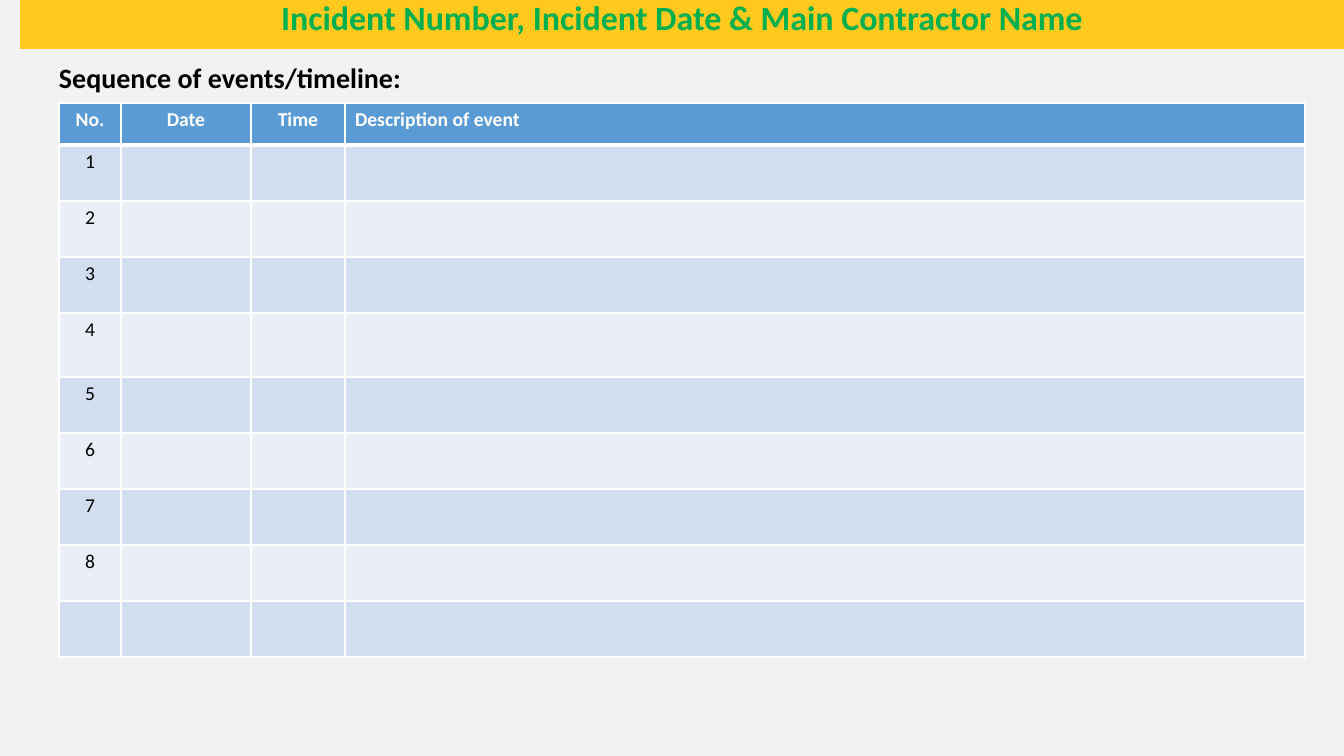
from lxml import etree
from pptx import Presentation
from pptx import util as u
from pptx.dml.color import RGBColor
from pptx.enum import text
from pptx.oxml import ns

PX_PER_INCH = 100.8
FONT = "Calibri"
BACKGROUND = RGBColor(0xF2, 0xF2, 0xF2)
BAND = RGBColor(0xFF, 0xC9, 0x1D)
GREEN = RGBColor(0x00, 0xB0, 0x50)
BLACK = RGBColor(0x00, 0x00, 0x00)
WHITE = RGBColor(0xFF, 0xFF, 0xFF)
HEADER_BLUE = RGBColor(0x5B, 0x9B, 0xD5)
ROW_FILLS = (RGBColor(0xD2, 0xDE, 0xEF), RGBColor(0xEA, 0xEF, 0xF7))

HEADINGS = ("No.", "Date", "Time", "Description of event")
COLUMN_WIDTHS = (62, 130, 94, 960)
EVENT_COUNT = 8
ROW_HEIGHTS = (42, 56, 56, 56, 64, 56, 56, 56, 56, 56)


def px(length):
    """Turn a length in px into EMU."""
    return u.Emu(round(length * 914400 / PX_PER_INCH))


def style(paragraph, size, color, bold=True):
    """Set the font of a paragraph."""
    font = paragraph.font
    font.name, font.size, font.bold = FONT, u.Pt(size), bold
    font.color.rgb = color


def add_border(cell, side, points):
    """Draw a solid white border on one side of a cell."""
    border = etree.SubElement(cell._tc.get_or_add_tcPr(), ns.qn(f"a:ln{side}"),
                              w=str(u.Pt(points)))
    solid = etree.SubElement(border, ns.qn("a:solidFill"))
    etree.SubElement(solid, ns.qn("a:srgbClr"), val=str(WHITE))


def fill_cell(cell, wording, row, column):
    """Write, colour and frame one cell of the timeline."""
    is_header = row == 0
    cell.text = wording
    paragraph = cell.text_frame.paragraphs[0]
    if column < len(HEADINGS) - 1:
        paragraph.alignment = text.PP_ALIGN.CENTER
    style(paragraph, 14, WHITE if is_header else BLACK, is_header)
    add_border(cell, "L", 1)
    add_border(cell, "R", 1)
    add_border(cell, "T", 3 if row == 1 else 1)
    add_border(cell, "B", 3 if is_header else 1)
    cell.fill.solid()
    cell.fill.fore_color.rgb = HEADER_BLUE if is_header else ROW_FILLS[(row - 1) % 2]


def place_title(slide, left, top, width, height):
    """Format the title placeholder as a coloured band."""
    title = slide.shapes.title
    title.left, title.top, title.width, title.height = map(px, (left, top, width, height))
    title.fill.solid()
    title.fill.fore_color.rgb = BAND
    frame = title.text_frame
    frame.text = "Incident Number, Incident Date & Main Contractor Name"
    frame.auto_size = text.MSO_AUTO_SIZE.NONE
    frame.vertical_anchor = text.MSO_ANCHOR.MIDDLE
    frame.margin_top, frame.margin_bottom = 0, px(8)
    heading = frame.paragraphs[0]
    heading.alignment = text.PP_ALIGN.CENTER
    heading.line_spacing = 0.9
    style(heading, 24.3, GREEN)


def place_subtitle(slide, left, top, width, height):
    """Add the heading above the timeline."""
    subtitle = slide.shapes.add_textbox(*map(px, (left, top, width, height)))
    frame = subtitle.text_frame
    frame.text = "Sequence of events/timeline:"
    frame.word_wrap = False
    frame.auto_size = text.MSO_AUTO_SIZE.SHAPE_TO_FIT_TEXT
    style(frame.paragraphs[0], 20, BLACK)


def place_timeline(slide, left, top):
    """Add the table of numbered events."""
    box = (left, top, sum(COLUMN_WIDTHS), sum(ROW_HEIGHTS))
    timeline = slide.shapes.add_table(len(ROW_HEIGHTS), len(HEADINGS), *map(px, box)).table
    for column, width in zip(timeline.columns, COLUMN_WIDTHS):
        column.width = px(width)
    for row, height in enumerate(ROW_HEIGHTS):
        timeline.rows[row].height = px(height)
        for column, heading in enumerate(HEADINGS):
            number = str(row) if column == 0 and row <= EVENT_COUNT else ""
            fill_cell(timeline.cell(row, column), number if row else heading, row, column)


def main():
    """Build and save the incident timeline slide."""
    deck = Presentation()
    deck.slide_width, deck.slide_height = px(1344), px(756)
    slide = deck.slides.add_slide(deck.slide_layouts[5])
    slide.background.fill.solid()
    slide.background.fill.fore_color.rgb = BACKGROUND
    place_title(slide, 20, -1, 1324, 50)
    place_subtitle(slide, 49, 56, 366, 44)
    place_timeline(slide, 59, 103)
    deck.save("out.pptx")


if __name__ == "__main__":
    main()
